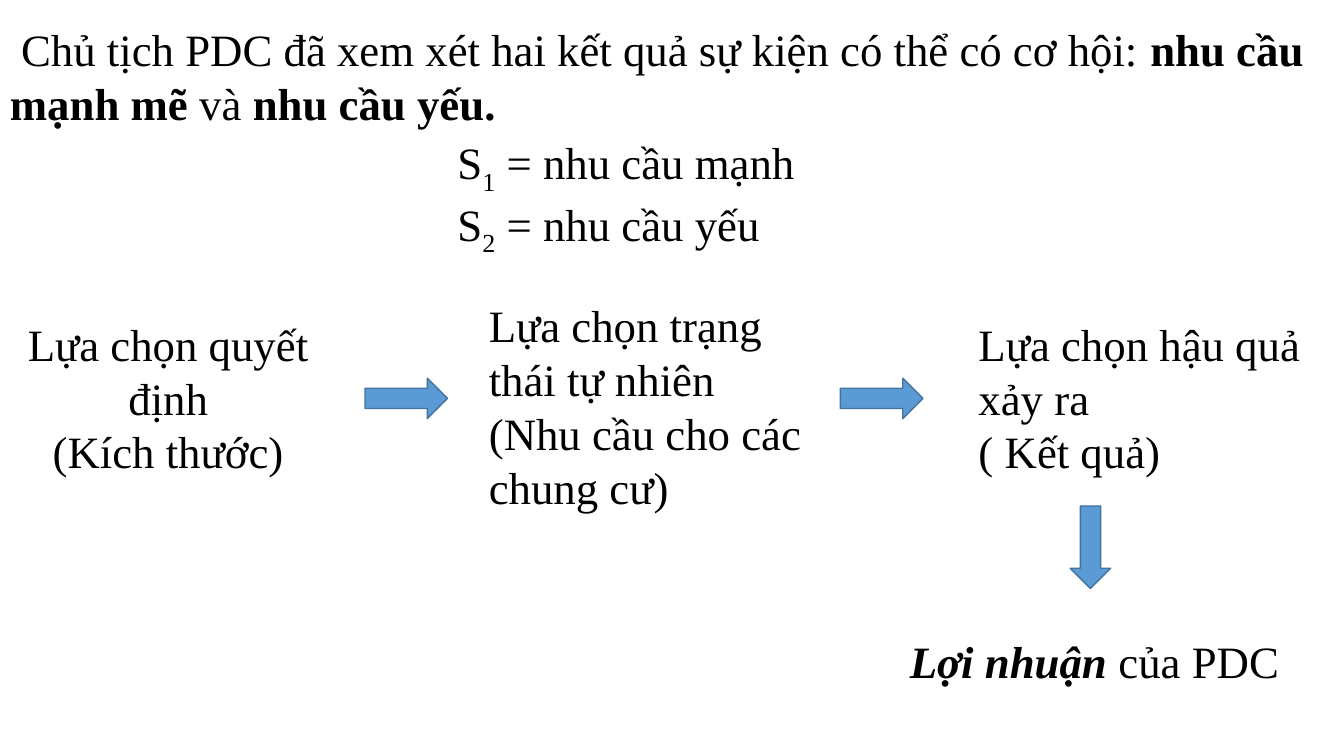
from pptx import Presentation
from pptx.dml.color import RGBColor
from pptx.enum.shapes import MSO_SHAPE
from pptx.enum.text import MSO_AUTO_SIZE, PP_ALIGN
from pptx.util import Cm, Pt

RIGHT_ARROW = MSO_SHAPE.RIGHT_ARROW
FIT_SHAPE = MSO_AUTO_SIZE.SHAPE_TO_FIT_TEXT
LEFT, CENTER = PP_ALIGN.LEFT, PP_ALIGN.CENTER
BLACK = RGBColor(0x00, 0x00, 0x00)
ARROW_FILL = RGBColor(0x5B, 0x9B, 0xD5)
ARROW_LINE = RGBColor(0x43, 0x73, 0x9E)

PLAIN = {"name": "Times New Roman", "size": Pt(32)}
BOLD = {**PLAIN, "bold": True}
BOLD_ITALIC = {**BOLD, "italic": True}
SUBSCRIPT = "-25000"

presentation = Presentation()
presentation.slide_width = Cm(33.87)
presentation.slide_height = Cm(19.05)
slide = presentation.slides.add_slide(presentation.slide_layouts[6])


def add_text(left, top, width, height, paragraphs, alignment=LEFT, wrap=True):
    """Add a text box; each paragraph is a list of (text, font format) runs."""
    box = slide.shapes.add_textbox(Cm(left), Cm(top), Cm(width), Cm(height))
    frame = box.text_frame
    frame.word_wrap = wrap
    frame.auto_size = FIT_SHAPE
    for index, runs in enumerate(paragraphs):
        paragraph = frame.add_paragraph() if index else frame.paragraphs[0]
        paragraph.alignment = alignment
        for text, font_format in runs:
            run = paragraph.add_run()
            run.text = text
            run.font.color.rgb = BLACK
            for attribute, value in font_format.items():
                setattr(run.font, attribute, value)
    return box


# Chance events and their two states
add_text(0, 0.43, 33.45, 4.52, [[
    (" Chủ tịch PDC đã xem xét hai kết quả sự kiện có thể có cơ hội: ", PLAIN),
    ("nhu cầu mạnh mẽ ", BOLD),
    ("và ", PLAIN),
    ("nhu cầu yếu.", BOLD),
]])
states = add_text(11.28, 3.28, 15.01, 3, [
    [("S", PLAIN), (number, PLAIN), (f" = {demand}", PLAIN)]
    for number, demand in (("1", "nhu cầu mạnh"), ("2", "nhu cầu yếu"))
])
for paragraph in states.text_frame.paragraphs:
    paragraph.runs[1].font._element.set("baseline", SUBSCRIPT)

# Steps from decision to consequence
steps = [
    (0, 7.85, 8.48, 4.37, CENTER, ("Lựa chọn quyết định", "(Kích thước)")),
    (12.07, 7.39, 8.76, 5.74, LEFT,
     ("Lựa chọn trạng thái tự nhiên", "(Nhu cầu cho các chung cư)")),
    (24.41, 7.85, 9.37, 4.37, LEFT, ("Lựa chọn hậu quả xảy ra", "( Kết quả)")),
]
for left, top, width, height, alignment, lines in steps:
    add_text(left, top, width, height,
             [[(line, PLAIN)] for line in lines], alignment)

# Profit
add_text(22.68, 15.85, 9.98, 1.63,
         [[("Lợi nhuận ", BOLD_ITALIC), ("của PDC", PLAIN)]], wrap=False)

# Arrows between the steps, and down to the profit
for left, top, rotation in ((9.2, 9.53, 0), (21.18, 9.53, 0), (26.44, 13.28, 90)):
    arrow = slide.shapes.add_shape(RIGHT_ARROW, Cm(left), Cm(top), Cm(2.08), Cm(1.02))
    arrow.rotation = rotation
    arrow.shadow.inherit = False
    arrow.fill.solid()
    arrow.fill.fore_color.rgb = ARROW_FILL
    arrow.line.color.rgb = ARROW_LINE
    arrow.line.width = Pt(1)

presentation.save("out.pptx")
